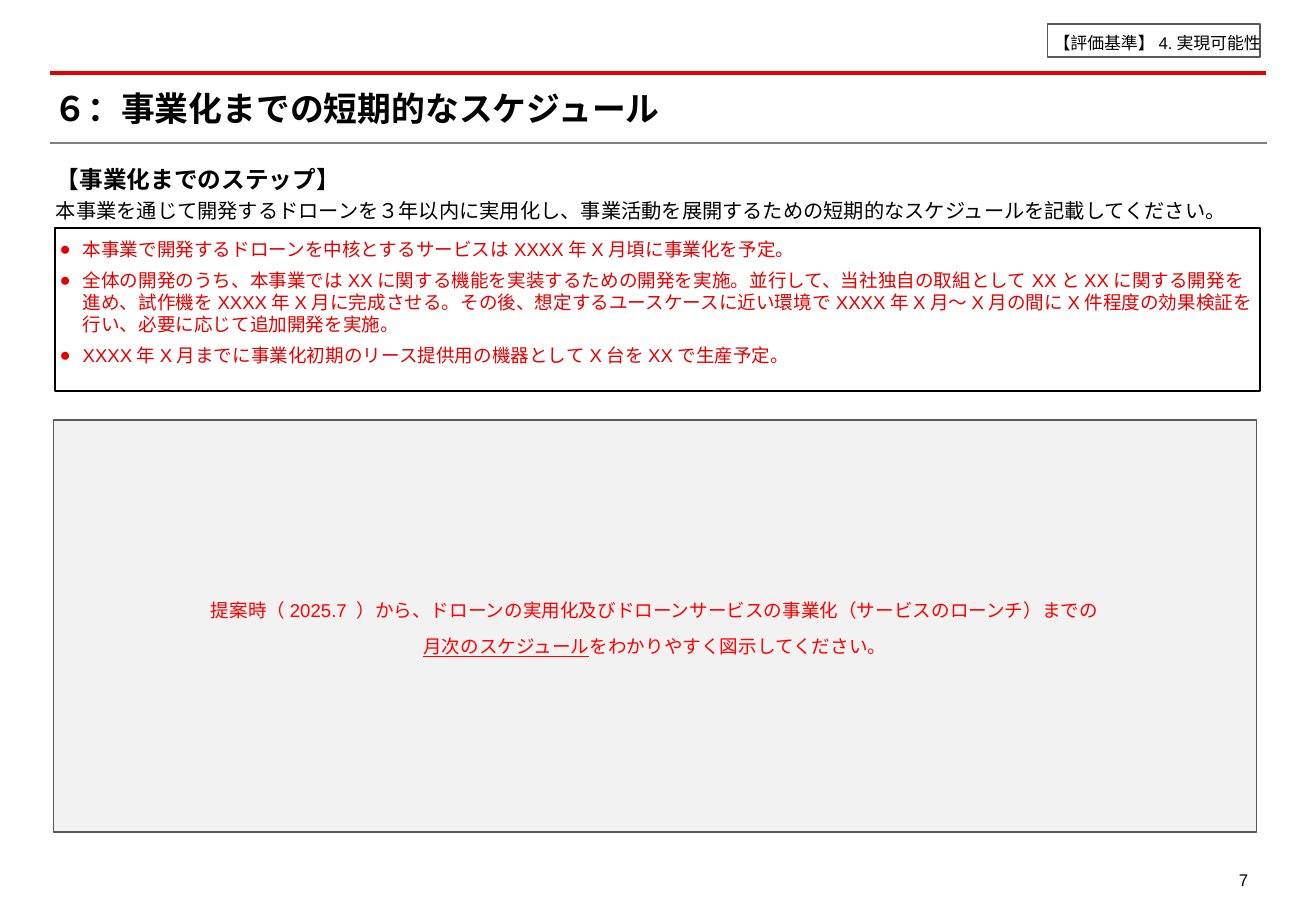
import dataclasses

import pptx
import pptx.dml.color
import pptx.enum.shapes
import pptx.enum.text
import pptx.oxml
import pptx.oxml.ns
import pptx.util
from pptx.util import Inches

ALIGN = pptx.enum.text.PP_ALIGN
ANCHOR = pptx.enum.text.MSO_ANCHOR
AUTO_SIZE = pptx.enum.text.MSO_AUTO_SIZE


@dataclasses.dataclass(frozen=True)
class Theme:
    font: str = "Arial"
    black: str = "000000"
    white: str = "FFFFFF"
    accent: str = "E60000"
    prompt: str = "FF0000"
    rule: str = "808080"
    panel: str = "F2F2F2"
    panel_line: str = "5A5A5A"
    label_line: str = "595959"
    title_size: float = 20
    heading_size: float = 14
    lead_size: float = 12
    body_size: float = 11
    small_size: float = 10


THEME = Theme()

STEPS = [
    "本事業で開発するドローンを中核とするサービスはXXXX年X月頃に事業化を予定。",
    "全体の開発のうち、本事業ではXXに関する機能を実装するための開発を実施。"
    "並行して、当社独自の取組としてXXとXXに関する開発を進め、試作機をXXXX年X月に完成させる。"
    "その後、想定するユースケースに近い環境でXXXX年X月～X月の間にX件程度の効果検証を行い、"
    "必要に応じて追加開発を実施。",
    "XXXX年X月までに事業化初期のリース提供用の機器としてX台をXXで生産予定。",
]


def rgb(color):
    return pptx.dml.color.RGBColor.from_string(color)


def place(shape, left, top, width, height):
    shape.left, shape.top = Inches(left), Inches(top)
    shape.width, shape.height = Inches(width), Inches(height)


def set_frame(text_frame, insets, anchor=ANCHOR.TOP, wrap=True, auto_size=AUTO_SIZE.NONE):
    left, top, right, bottom = insets
    text_frame.margin_left, text_frame.margin_top = Inches(left), Inches(top)
    text_frame.margin_right, text_frame.margin_bottom = Inches(right), Inches(bottom)
    text_frame.vertical_anchor = anchor
    text_frame.auto_size = auto_size
    text_frame.word_wrap = wrap


def format_run(run, size, color, bold=False):
    run.font.name = THEME.font
    run.font.size = pptx.util.Pt(size)
    run.font.bold = bold
    run.font.color.rgb = rgb(color)


def format_paragraph(paragraph, size, color=THEME.black, bold=False, align=ALIGN.LEFT,
                     line_spacing=1.2, before=0, after=0):
    paragraph.alignment = align
    paragraph.line_spacing = line_spacing
    paragraph.space_before = pptx.util.Pt(before)
    paragraph.space_after = pptx.util.Pt(after)
    for run in paragraph.runs:
        format_run(run, size, color, bold)


def add_bullet(paragraph, indent, color):
    properties = paragraph._p.get_or_add_pPr()
    properties.set("marL", str(Inches(indent)))
    properties.set("indent", str(-Inches(indent)))
    namespace = pptx.oxml.ns.nsdecls("a")
    for markup in (
        f'<a:buClr {namespace}><a:srgbClr val="{color}"/></a:buClr>',
        f'<a:buFont {namespace} typeface="{THEME.font}"/>',
        f'<a:buChar {namespace} char="●"/>',
    ):
        properties.append(pptx.oxml.parse_xml(markup))


def add_box(slide, bounds, line_color, fill_color=None):
    shape = slide.shapes.add_shape(
        pptx.enum.shapes.MSO_SHAPE.RECTANGLE, *map(Inches, bounds))
    shape.shadow.inherit = False
    if fill_color:
        shape.fill.solid()
        shape.fill.fore_color.rgb = rgb(fill_color)
    else:
        shape.fill.background()
    shape.line.color.rgb = rgb(line_color)
    shape.line.width = pptx.util.Pt(1)
    return shape


def add_rule(slide, top, right, color, width):
    connector = slide.shapes.add_connector(
        pptx.enum.shapes.MSO_CONNECTOR.STRAIGHT,
        Inches(0.41), Inches(top), Inches(right), Inches(top))
    connector.line.color.rgb = rgb(color)
    connector.line.width = pptx.util.Pt(width)
    connector._element.spPr.append(
        pptx.oxml.parse_xml(f'<a:effectLst {pptx.oxml.ns.nsdecls("a")}/>'))


def add_text(slide, bounds, lines, insets, wrap=True, align=ALIGN.LEFT):
    text_frame = slide.shapes.add_textbox(*map(Inches, bounds)).text_frame
    set_frame(text_frame, insets, wrap=wrap)
    text_frame.text = "\n".join(text for text, size, bold in lines)
    for paragraph, (text, size, bold) in zip(text_frame.paragraphs, lines):
        format_paragraph(paragraph, size, bold=bold, align=align)


def set_title(slide, text):
    title = slide.shapes.title
    place(title, 0.44, 0.72, 9.91, 0.34)
    title.text_frame.text = text
    set_frame(title.text_frame, (0, 0, 0, 0), ANCHOR.MIDDLE,
              auto_size=AUTO_SIZE.SHAPE_TO_FIT_TEXT)
    format_paragraph(title.text_frame.paragraphs[0], THEME.title_size,
                     bold=True, line_spacing=1.0)


def add_steps(slide):
    box = add_box(slide, (0.45, 1.88, 9.92, 1.34), THEME.black, THEME.white)
    text_frame = box.text_frame
    set_frame(text_frame, (0.04, 0.08, 0.02, 0.02))
    text_frame.text = "\n".join(STEPS)
    for paragraph in text_frame.paragraphs:
        format_paragraph(paragraph, THEME.body_size, THEME.accent,
                         line_spacing=1.0, after=5)
        add_bullet(paragraph, 0.19, THEME.accent)


def add_schedule_panel(slide):
    panel = add_box(slide, (0.44, 3.46, 9.9, 3.39), THEME.panel_line, THEME.panel)
    text_frame = panel.text_frame
    set_frame(text_frame, (0.02, 0.02, 0.02, 0.02), ANCHOR.MIDDLE, wrap=False)
    text_frame.text = (
        "提案時（2025.7 ）から、ドローンの実用化及びドローンサービスの事業化（サービスのローンチ）までの\n"
        "月次のスケジュール")
    closing = text_frame.paragraphs[1]
    closing.add_run().text = "をわかりやすく図示してください。"
    for paragraph in text_frame.paragraphs:
        format_paragraph(paragraph, THEME.body_size, THEME.prompt,
                         align=ALIGN.CENTER, before=5.5)
    closing.runs[0].font.underline = True


def add_criterion_label(slide):
    label = add_box(slide, (8.62, 0.2, 1.75, 0.27), THEME.label_line)
    text_frame = label.text_frame
    set_frame(text_frame, (0.02, 0.02, 0.02, 0.02), ANCHOR.MIDDLE, wrap=False)
    text_frame.text = " 【評価基準】4.実現可能性"
    format_paragraph(text_frame.paragraphs[0], THEME.small_size, before=5)


def main():
    presentation = pptx.Presentation()
    presentation.slide_width = Inches(10.83)
    presentation.slide_height = Inches(7.5)
    slide = presentation.slides.add_slide(presentation.slide_layouts[5])

    add_text(slide, (9.93, 7.08, 0.44, 0.28), [("7", THEME.small_size, False)],
             (0.1, 0.05, 0.1, 0.05), wrap=False, align=ALIGN.RIGHT)
    add_rule(slide, 0.6, 10.42, THEME.accent, 2)
    add_rule(slide, 1.18, 10.43, THEME.rule, 1.25)
    set_title(slide, "６：事業化までの短期的なスケジュール")
    add_text(slide, (0.46, 1.31, 10.05, 0.5), [
        ("【事業化までのステップ】", THEME.heading_size, True),
        ("本事業を通じて開発するドローンを３年以内に実用化し、事業活動を展開するための"
         "短期的なスケジュールを記載してください。", THEME.lead_size, False),
    ], (0, 0, 0, 0))
    add_steps(slide)
    add_schedule_panel(slide)
    add_criterion_label(slide)
    presentation.save("out.pptx")


if __name__ == "__main__":
    main()
